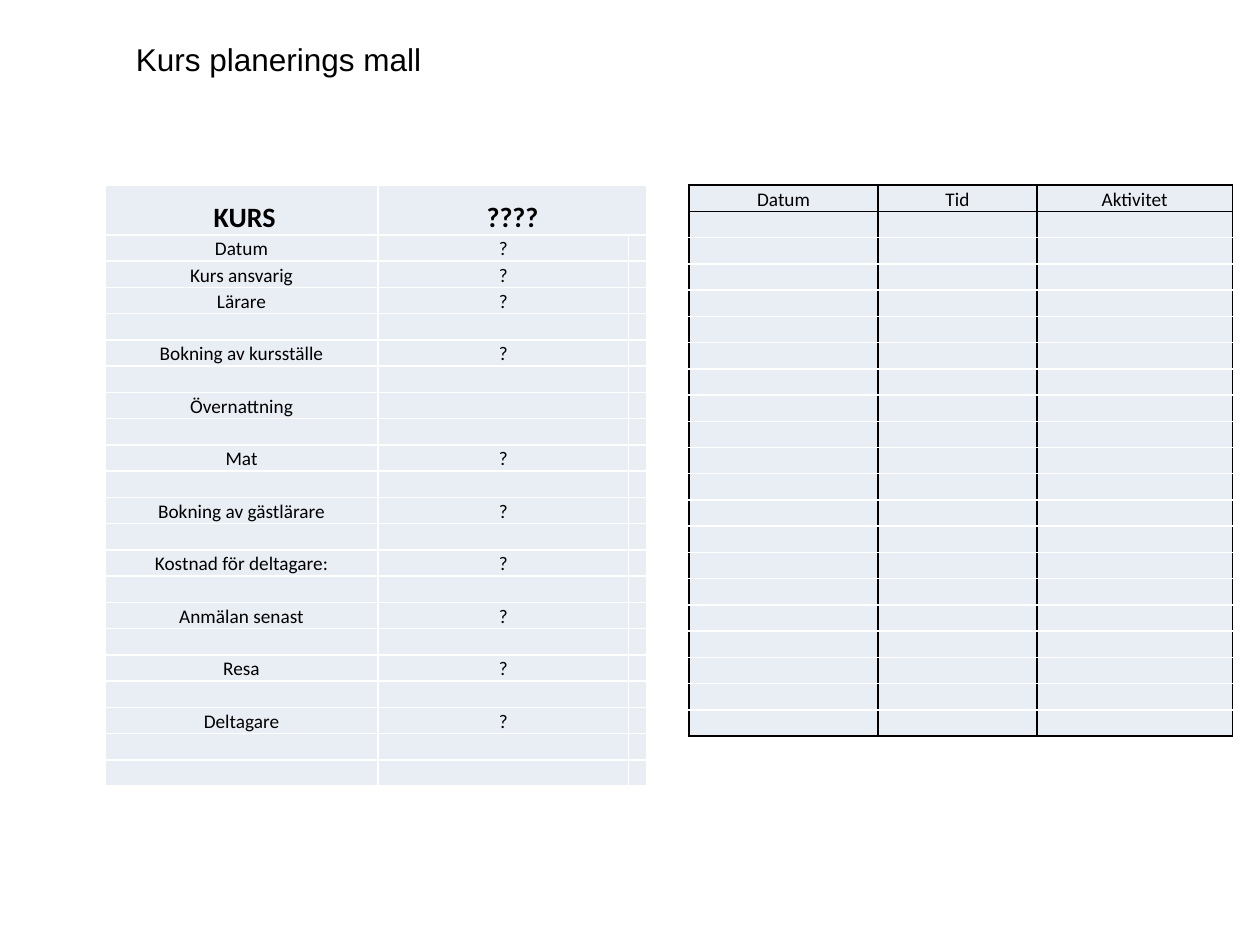
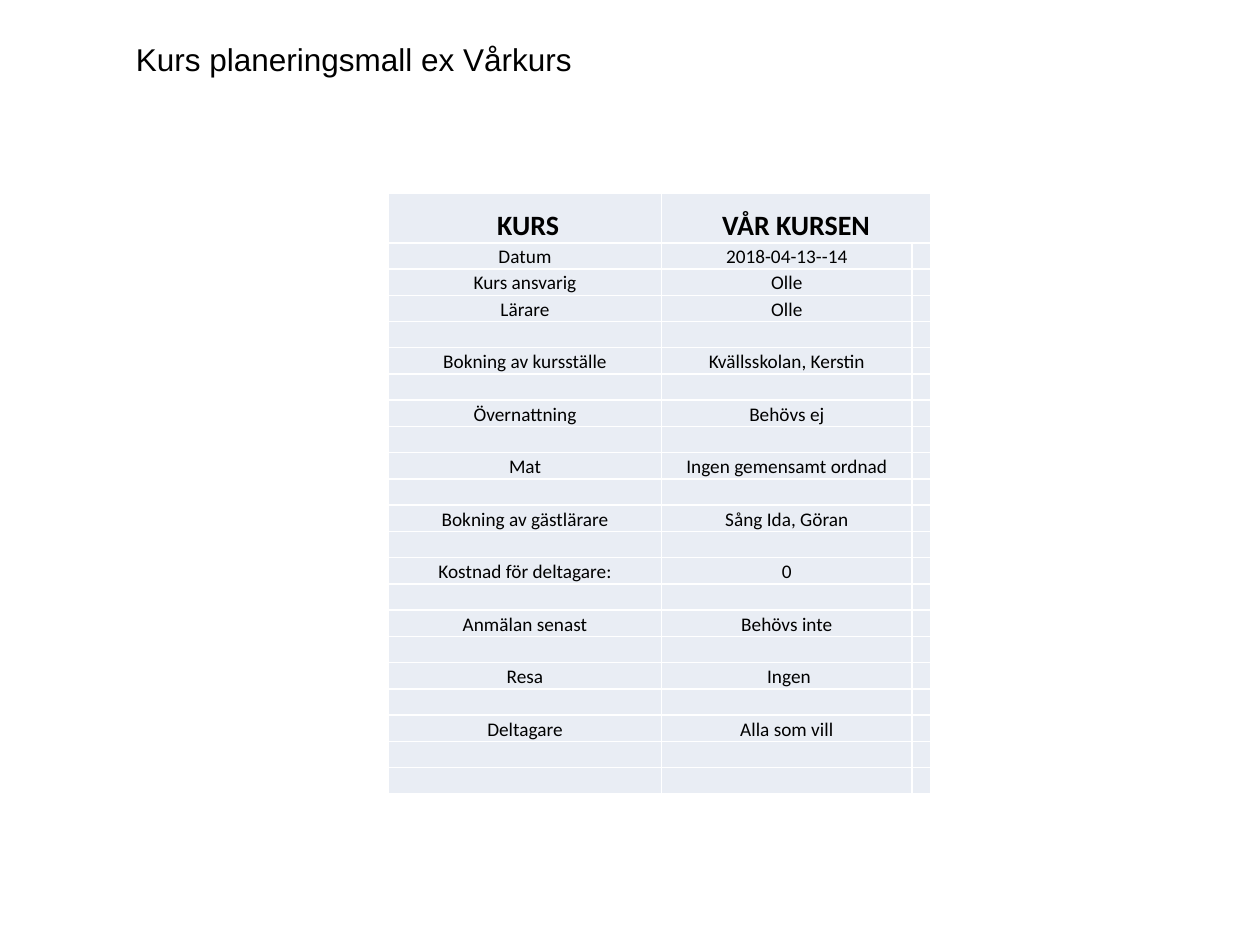
from dataclasses import dataclass
from typing import NamedTuple

from lxml.etree import SubElement
from pptx import Presentation
from pptx.dml.color import RGBColor
from pptx.enum.text import MSO_ANCHOR as Anchor, MSO_AUTO_SIZE as AutoSize, PP_ALIGN as Align
from pptx.oxml.ns import qn
from pptx.util import Pt

EMU_PER_PX = 9525  # 96 px to the inch


@dataclass(frozen=True)
class Theme:
    ink: str = "000000"
    white: str = "FFFFFF"
    cell: str = "E9EDF4"
    title_font: str = "Arial"
    table_font: str = "Calibri"
    title_size: int = 18
    heading_size: int = 16
    cell_size: int = 11
    border: int = 1


class Borders(NamedTuple):
    left: str
    right: str
    top: str
    bottom: str


class Grid(NamedTuple):
    left: int
    top: int
    columns: list[int]
    rows: list[int]


class CoursePlan(NamedTuple):
    left: int
    top: int
    course: str
    answers: list[str]


class Page(NamedTuple):
    title: str
    plan: CoursePlan
    has_schedule: bool


THEME = Theme()
ROW = 20
PLAN_COLUMNS = [208, 191, 14]
PLAN_ROWS = [38] + [ROW] * 21
SCHEDULE = Grid(525, 141, [144, 121, 149], [ROW] * 21)
SCHEDULE_HEADINGS = ["Datum", "Tid", "Aktivitet"]

LABELS = ["Datum", "Kurs ansvarig", "Lärare", "Bokning av kursställe", "Övernattning",
          "Mat", "Bokning av gästlärare", "Kostnad för deltagare:", "Anmälan senast",
          "Resa", "Deltagare"]
# The first three labels follow each other, the rest take every second row
LABEL_ROWS = [1, 2, *range(3, 20, 2)]

PAGES = [
    Page("Kurs planerings mall",
         CoursePlan(80, 141, "????",
                    ["" if label == "Övernattning" else "?" for label in LABELS]), True),
    Page("Kurs planeringsmall ex Vårkurs",
         CoursePlan(296, 147, "VÅR KURSEN",
                    ["2018-04-13--14", "Olle", "Olle", "Kvällsskolan, Kerstin", "Behövs ej",
                     "Ingen gemensamt ordnad", "Sång Ida, Göran", "0", "Behövs inte",
                     " Ingen", "Alla som vill"]), False),
]


def px(length: int) -> int:
    return length * EMU_PER_PX


def set_all(target, values: dict) -> None:
    for name, value in values.items():
        setattr(target, name, value)


def add_title(slide, text: str) -> None:
    title = slide.shapes.title
    set_all(title, dict(left=px(94), top=px(26), width=px(726), height=px(38)))
    frame = title.text_frame
    frame.text = text
    set_all(frame, dict(word_wrap=True, vertical_anchor=Anchor.TOP,
                        auto_size=AutoSize.SHAPE_TO_FIT_TEXT))
    para = frame.paragraphs[0]
    para.alignment = Align.LEFT
    font = para.runs[0].font
    set_all(font, dict(name=THEME.title_font, size=Pt(THEME.title_size)))
    font.color.rgb = RGBColor.from_string(THEME.ink)


def add_grid(slide, grid: Grid):
    table = slide.shapes.add_table(
        len(grid.rows), len(grid.columns), px(grid.left), px(grid.top),
        px(sum(grid.columns)), px(sum(grid.rows))).table
    set_all(table, dict(first_row=False, horz_banding=False))
    for column, width in zip(table.columns, grid.columns):
        column.width = px(width)
    for row, height in zip(table.rows, grid.rows):
        row.height = px(height)
    return table


def style_cell(cell, borders: Borders) -> None:
    set_all(cell, dict(margin_left=px(1), margin_right=px(1), margin_top=px(1),
                       margin_bottom=0, vertical_anchor=Anchor.BOTTOM))
    # Border lines come before the fill in the cell properties
    properties = cell._tc.get_or_add_tcPr()
    for tag, color in zip(("a:lnL", "a:lnR", "a:lnT", "a:lnB"), borders):
        line = SubElement(properties, qn(tag), w=str(Pt(THEME.border)))
        SubElement(SubElement(line, qn("a:solidFill")), qn("a:srgbClr"), val=color)
    cell.fill.solid()
    cell.fill.fore_color.rgb = RGBColor.from_string(THEME.cell)
    # Keeps rows without text at their set height
    SubElement(cell.text_frame.paragraphs[0]._p, qn("a:endParaRPr"),
               sz=str(THEME.cell_size * 100))


def write_cell(cell, text: str, size: int = THEME.cell_size, bold: bool = False) -> None:
    if not text:
        return
    para = cell.text_frame.paragraphs[0]
    para.alignment = Align.CENTER
    span = para.add_run()
    span.text = text
    set_all(span.font, dict(name=THEME.table_font, size=Pt(size), bold=bold))
    span.font.color.rgb = RGBColor.from_string(THEME.ink)


def add_schedule(slide) -> None:
    table = add_grid(slide, SCHEDULE)
    last = len(SCHEDULE.rows) - 1
    for index, row in enumerate(table.rows):
        top = THEME.ink if index <= 1 else THEME.white
        bottom = THEME.ink if index in (0, last) else THEME.white
        for cell in row.cells:
            style_cell(cell, Borders(THEME.ink, THEME.ink, top, bottom))
    for cell, heading in zip(table.rows[0].cells, SCHEDULE_HEADINGS):
        write_cell(cell, heading)


def add_plan(slide, plan: CoursePlan) -> None:
    table = add_grid(slide, Grid(plan.left, plan.top, PLAN_COLUMNS, PLAN_ROWS))
    for cell in table.iter_cells():
        style_cell(cell, Borders(*[THEME.white] * 4))
    table.cell(0, 1).merge(table.cell(0, 2))
    for column, heading in enumerate((" KURS", plan.course)):
        write_cell(table.cell(0, column), heading, THEME.heading_size, bold=True)
    for row, label, answer in zip(LABEL_ROWS, LABELS, plan.answers):
        write_cell(table.cell(row, 0), label)
        write_cell(table.cell(row, 1), answer)


def main() -> None:
    deck = Presentation()
    set_all(deck, dict(slide_width=px(960), slide_height=px(720)))
    title_only = deck.slide_layouts[5]
    for page in PAGES:
        slide = deck.slides.add_slide(title_only)
        add_title(slide, page.title)
        if page.has_schedule:
            add_schedule(slide)
        add_plan(slide, page.plan)
    deck.save("out.pptx")


if __name__ == "__main__":
    main()
